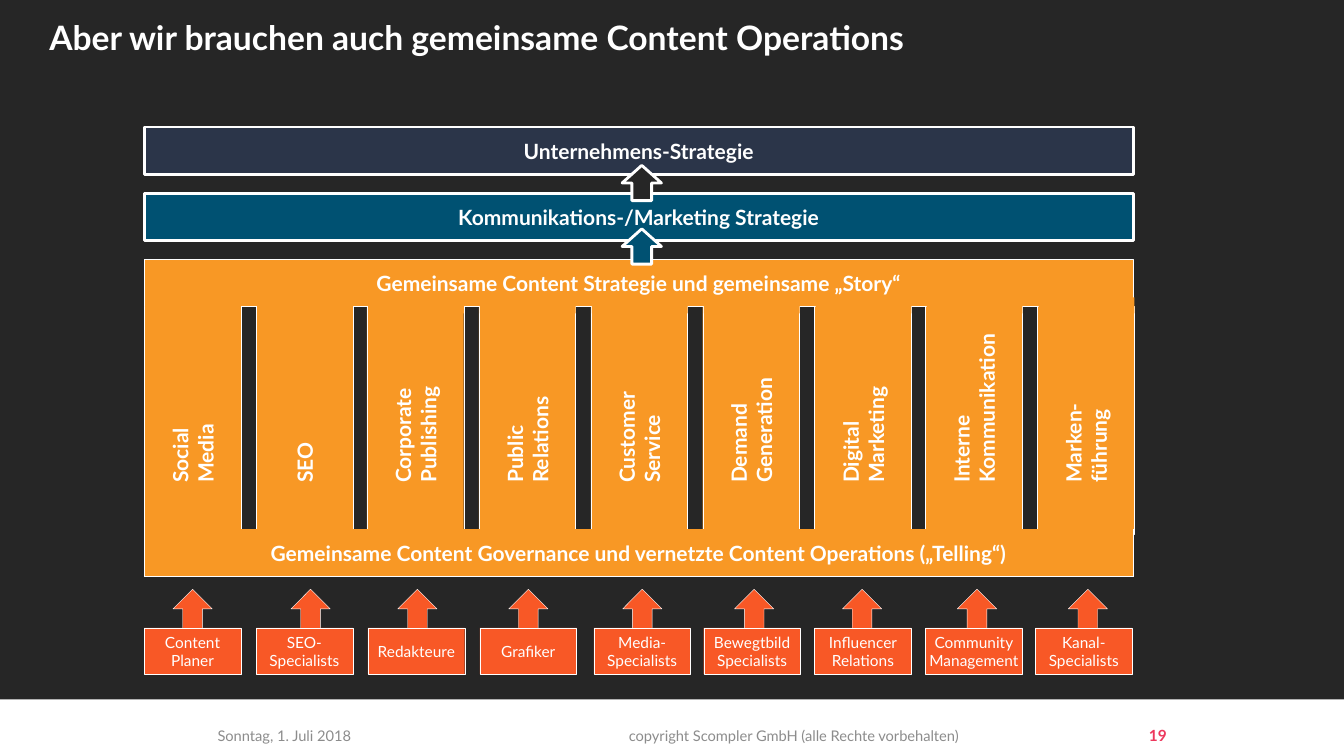
import copy

import pptx
import pptx.dml.color
import pptx.enum.shapes
import pptx.enum.text
import pptx.oxml.ns
import pptx.oxml.xmlchemy
import pptx.util

SCALE = 9144  # EMU per px, 100 px to the inch
FONT = "Lato"
WHITE, DARK, GREY, PINK = "FFFFFF", "262626", "8C8C8C", "ED385D"
AMBER, ORANGE, TEAL, NAVY = "F89825", "F85826", "005172", "2B3549"

SHAPE = pptx.enum.shapes.MSO_SHAPE
LEFT = pptx.enum.text.PP_ALIGN.LEFT
CENTER = pptx.enum.text.PP_ALIGN.CENTER
RIGHT = pptx.enum.text.PP_ALIGN.RIGHT
THIN, BOLD_LINE = 0.25, 2

BAR_LEFT, BAR_WIDTH, BAR_HEIGHT = 143, 981, 47
BAR_RIGHT = BAR_LEFT + BAR_WIDTH
GOVERNANCE_TOP = 525
SILO_LENGTH, SILO_WIDTH = 226, 96
FIRST_CENTER, PITCH = 191, 110.75

# discipline, role, left of role box, left of arrow, side inset of role box
SILOS = [
    ("Social\vMedia", "Content\vPlaner", 143, 168, 10),
    ("SEO", "SEO-\vSpecialists", 254, 285, 10),
    ("Corporate\nPublishing", "Redakteure", 365, 391, 4),
    ("Public\vRelations", "Grafiker", 476, 501, 10),
    ("Customer\vService", "Media-\vSpecialists", 589, 614, 10),
    ("Demand\vGeneration", "Bewegtbild\vSpecialists", 698, 725, 4),
    ("Digital\vMarketing", "Influencer\vRelations", 808, 832, 4),
    ("Interne\vKommunikation", "Community\vManagement", 918, 946, 0),
    ("Marken-\vführung", "Kanal-\vSpecialists", 1027, 1056, 0),
]


def px(length):
    return pptx.util.Emu(length * SCALE)


def color(value):
    return pptx.dml.color.RGBColor.from_string(value)


def write(box, text, size=15, bold=True, ink=WHITE, align=CENTER, insets=(10, 10)):
    """Fill a shape with text; \\n starts a paragraph, \\v breaks a line."""
    frame = box.text_frame
    frame.word_wrap = True
    frame.vertical_anchor = pptx.enum.text.MSO_ANCHOR.MIDDLE
    frame.margin_left, frame.margin_right = px(insets[0]), px(insets[1])
    frame.margin_top = frame.margin_bottom = px(5)
    frame.text = text
    for para in frame.paragraphs:
        para.alignment = align
        for span in para.runs:
            span.font.name = FONT
            span.font.size = pptx.util.Pt(size)
            span.font.bold = bold
            span.font.color.rgb = color(ink)
        # a line break needs the format of its text to keep the line height
        for line_break in para._p.findall(pptx.oxml.ns.qn("a:br")):
            line_break.append(copy.deepcopy(para.runs[0]._r.rPr))


class Page:
    def __init__(self, deck):
        self.shapes = deck.slides.add_slide(deck.slide_layouts[6]).shapes

    def block(self, left, top, width, height, fill, line=None, kind=SHAPE.RECTANGLE, turn=0):
        box = self.shapes.add_shape(kind, px(left), px(top), px(width), px(height))
        box.shadow.inherit = False
        box.rotation = turn
        box.fill.solid()
        box.fill.fore_color.rgb = color(fill)
        if line:
            box.line.color.rgb = color(WHITE)
            box.line.width = pptx.util.Pt(line)
        else:
            box.line.fill.background()
        return box

    def bar(self, top, text, fill, line=None):
        write(self.block(BAR_LEFT, top, BAR_WIDTH, BAR_HEIGHT, fill, line), text)

    def up_arrow(self, left, top, length, fill, line):
        self.block(left, top, length, 39, fill, line, SHAPE.RIGHT_ARROW, 270)

    def label(self, left, top, width, height, text, **text_format):
        box = self.shapes.add_textbox(px(left), px(top), px(width), px(height))
        write(box, text, **text_format)

    def rule(self, x1, y1, x2, y2):
        line = self.shapes.add_connector(
            pptx.enum.shapes.MSO_CONNECTOR.STRAIGHT, px(x1), px(y1), px(x2), px(y2))
        line.line.color.rgb = color(WHITE)
        line.line.width = pptx.util.Pt(THIN)
        line._element.spPr.append(pptx.oxml.xmlchemy.OxmlElement("a:effectLst"))


def main():
    deck = pptx.Presentation()
    deck.slide_width, deck.slide_height = px(1333), px(750)
    page = Page(deck)

    page.block(0, 0, 1333, 694, DARK)
    title = page.block(0, 0, 1333, 74, DARK)
    write(title, "Aber wir brauchen auch gemeinsame Content Operations",
          size=24, align=LEFT, insets=(49, 10))
    page.label(562, 716, 451, 28, "copyright Scompler GmbH (alle Rechte vorbehalten)",
               size=10.5, bold=False, ink=GREY)
    page.label(1092, 716, 75, 28, "19", size=11, ink=PINK, align=RIGHT)
    page.label(206, 716, 348, 28, "Sonntag, 1. Juli 2018",
               size=10.5, bold=False, ink=GREY, align=LEFT)

    centers = [round(FIRST_CENTER + PITCH * index) for index in range(len(SILOS))]
    for center, (discipline, *_) in zip(centers, SILOS):
        silo = page.block(center - SILO_LENGTH // 2, 369, SILO_LENGTH, SILO_WIDTH,
                          AMBER, THIN, turn=270)
        write(silo, discipline, align=LEFT, insets=(51, 10))

    page.bar(257, "Gemeinsame Content Strategie und gemeinsame „Story“", AMBER, THIN)
    for center in centers:  # hides the seam between strategy bar and silo
        page.block(center - 47, 295, 95, 16, AMBER)
    page.bar(GOVERNANCE_TOP,
             "Gemeinsame Content Governance und vernetzte Content Operations („Telling“)",
             AMBER)

    for _, _, _, arrow_left, _ in SILOS:
        page.up_arrow(arrow_left, 588, 46, ORANGE, THIN)

    governance_bottom = GOVERNANCE_TOP + BAR_HEIGHT
    for side in (BAR_LEFT, BAR_RIGHT):
        page.rule(side, GOVERNANCE_TOP, side, governance_bottom)
    page.rule(BAR_LEFT, governance_bottom, BAR_RIGHT, governance_bottom)

    for _, role, box_left, _, inset in SILOS:
        role_box = page.block(box_left, 623, 96, 46, ORANGE, THIN)
        write(role_box, role, size=11, bold=False, insets=(inset, inset))

    page.bar(192, "Kommunikations-/Marketing Strategie", TEAL, BOLD_LINE)
    page.bar(126, "Unternehmens-Strategie", NAVY, BOLD_LINE)
    page.up_arrow(619, 225, 35, TEAL, BOLD_LINE)
    page.up_arrow(619, 162, 35, DARK, BOLD_LINE)

    deck.save("out.pptx")


if __name__ == "__main__":
    main()
